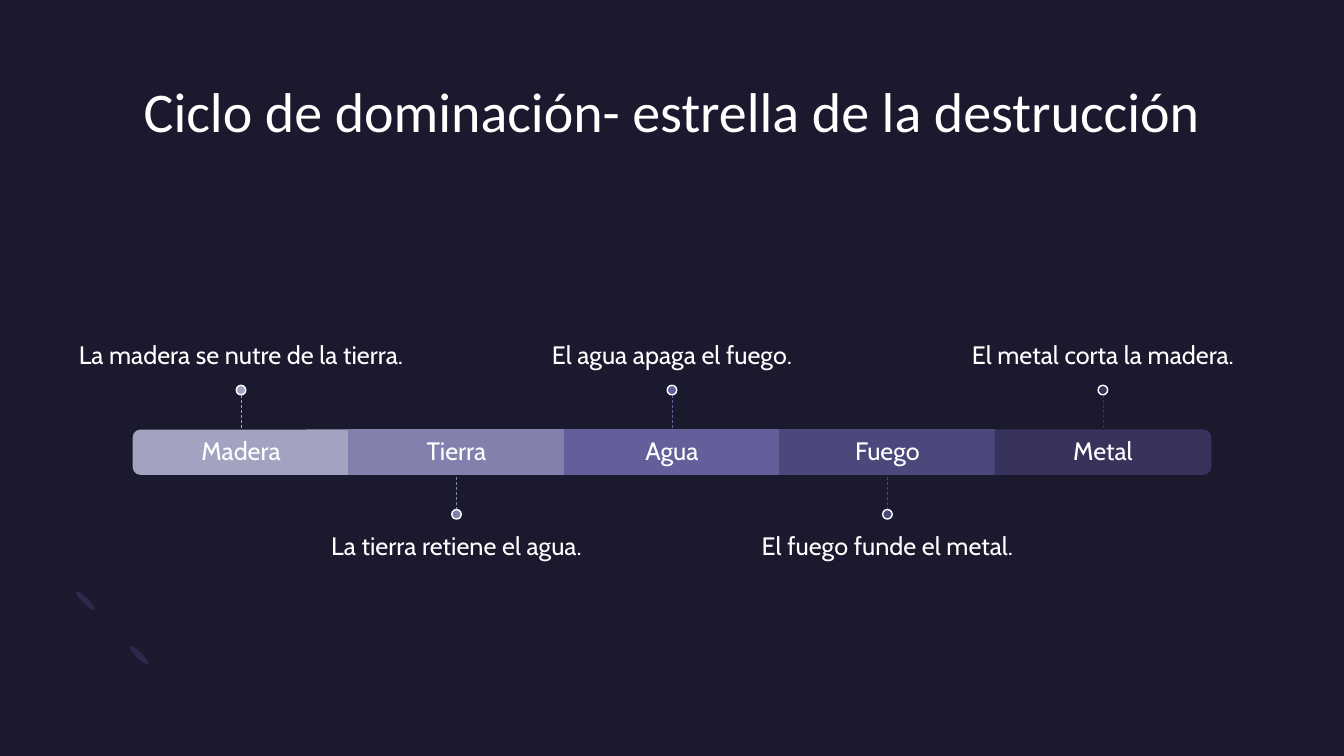
from lxml import etree
from pptx import Presentation
from pptx.dml.color import RGBColor
from pptx.enum.dml import MSO_LINE as Dash
from pptx.enum.shapes import MSO_CONNECTOR as Link, MSO_SHAPE as Kind
from pptx.enum.text import MSO_ANCHOR as Anchor, MSO_AUTO_SIZE as Fit, PP_ALIGN as Align
from pptx.oxml.ns import qn
from pptx.util import Cm, Pt

HUES = {
    "back": "1B192E", "text": "FFFFFF", "petal": "2C284A", "ring": "7771B2",
    "Madera": "A3A3C1", "Tierra": "8281AE", "Agua": "625F9A",
    "Fuego": "4C487B", "Metal": "37335B",
}
STEPS = [
    ("Madera", "La madera se nutre de la tierra."),
    ("Tierra", "La tierra retiene el agua."),
    ("Agua", "El agua apaga el fuego."),
    ("Fuego", "El fuego funde el metal."),
    ("Metal", "El metal corta la madera."),
]
INSET = 0.38
DOT = 0.24
STEM = 0.89


def hue(name):
    return RGBColor.from_string(HUES[name])


def paint(shape, fill, line=None):
    shape.shadow.inherit = False
    shape.fill.solid()
    shape.fill.fore_color.rgb = hue(fill)
    if line:
        shape.line.color.rgb = hue(line)
        shape.line.width = Pt(1)
    else:
        shape.line.fill.background()


def write(shape, text, font, size, anchor, pads=(0, 0, 0, 0)):
    """Fill a text frame; pads are left, top, right, bottom in cm."""
    frame = shape.text_frame
    frame.word_wrap = True
    frame.auto_size = Fit.NONE
    frame.vertical_anchor = anchor
    frame.margin_left, frame.margin_top, frame.margin_right, frame.margin_bottom = map(Cm, pads)
    para = frame.paragraphs[0]
    para.alignment = Align.CENTER
    para.line_spacing = 0.9
    run = para.add_run()
    run.text = text
    run.font.name = font
    run.font.size = Pt(size)
    run.font.color.rgb = hue("text")


def head(slide, x, y, w, h):
    title = slide.shapes.title
    title.left, title.top, title.width, title.height = map(Cm, (x, y, w, h))
    write(title, "Ciclo de dominación- estrella de la destrucción", "Calibri", 40, Anchor.TOP)


def curve(a, b, c, d, count=16):
    """Points of a cubic curve after its start."""
    for i in range(1, count + 1):
        t = i / count
        u = 1 - t
        yield tuple(u**3 * p + 3 * u * u * t * q + 3 * u * t * t * r + t**3 * s
                    for p, q, r, s in zip(a, b, c, d))


def mark(slide, x, y):
    """Faint ring and two petals in the lower corner."""
    for dx, dy in ((2.01, 1.37), (0.66, 0)):
        petal = slide.shapes.add_shape(Kind.OVAL, Cm(x + dx), Cm(y + dy), Cm(0.15), Cm(0.66))
        petal.rotation = 135
        paint(petal, "petal")
    start = (0.51, 1.93)
    dots = [
        *curve(start, (0, 1.42), (0.05, 0.56), (0.64, -0.03)), (1.09, 0.43),
        *curve((1.09, 0.43), (0.79, 0.71), (0.76, 1.17), (1.02, 1.4)),
        *curve((1.02, 1.4), (1.27, 1.65), (1.7, 1.63), (2.01, 1.35)), (2.44, 1.8),
        *curve((2.44, 1.8), (1.88, 2.36), (0.99, 2.44), start),
    ]
    dots = [(Cm(x + px), Cm(y + py)) for px, py in dots]
    build = slide.shapes.build_freeform(*dots[0])
    build.add_line_segments(dots[1:])
    ring = build.convert_to_shape()
    paint(ring, "ring")
    shade = ring.fill._xPr.find(qn("a:solidFill"))[0]
    etree.SubElement(shade, qn("a:alpha"), val="2000")


def block(slide, name, turn, x, y, w, h):
    """One bar segment; a turn rounds its outer end."""
    if turn:
        bar = slide.shapes.add_shape(
            Kind.ROUND_2_SAME_RECTANGLE,
            Cm(x + (w - h) / 2), Cm(y + (h - w) / 2), Cm(h), Cm(w))
        bar.rotation = turn
    else:
        bar = slide.shapes.add_shape(Kind.RECTANGLE, Cm(x), Cm(y), Cm(w), Cm(h))
    paint(bar, name, name)
    label = slide.shapes.add_textbox(Cm(x), Cm(y), Cm(w), Cm(h))
    write(label, name, "Cabin", 18, Anchor.MIDDLE, (INSET,) * 4)
    return bar


def callout(slide, name, note, bar, mid, edge, up):
    """Stem, dot and note that leave the bar at its edge."""
    way = -1 if up else 1
    tip = edge + way * STEM
    stem = slide.shapes.add_connector(Link.STRAIGHT, Cm(mid), Cm(tip), Cm(mid), Cm(edge))
    if not bar.rotation:
        stem.end_connect(bar, 0 if up else 2)
    stem.line.color.rgb = hue(name)
    stem.line.width = Pt(0.5)
    stem.line.dash_style = Dash.DASH
    etree.SubElement(stem._element.spPr, qn("a:effectLst"))

    top = tip - DOT if up else tip
    dot = slide.shapes.add_shape(Kind.OVAL, Cm(mid - DOT / 2), Cm(top), Cm(DOT), Cm(DOT))
    paint(dot, name, "text")

    w, h = 9.07, 3.86
    top = tip - DOT - h if up else tip + DOT
    box = slide.shapes.add_textbox(Cm(mid - w / 2), Cm(top), Cm(w), Cm(h))
    if up:
        write(box, note, "Cabin", 18, Anchor.BOTTOM, (0, 0, 0, INSET))
    else:
        write(box, note, "Cabin", 18, Anchor.TOP, (0, INSET, 0, 0))


def cycle(slide, x, y, w, h):
    step = w / len(STEPS)
    turns = {0: 270, len(STEPS) - 1: 90}
    for i, (name, note) in enumerate(STEPS):
        left = x + i * step
        bar = block(slide, name, turns.get(i, 0), left, y, step, h)
        up = i % 2 == 0
        callout(slide, name, note, bar, left + step / 2, y if up else y + h, up)


def main():
    deck = Presentation()
    deck.slide_width, deck.slide_height = Cm(33.87), Cm(19.05)
    slide = deck.slides.add_slide(deck.slide_layouts[5])
    slide.background.fill.solid()
    slide.background.fill.fore_color.rgb = hue("back")
    mark(slide, 1.42, 14.81)
    head(slide, 1.52, 2.13, 30.81, 2.59)
    cycle(slide, 3.36, 10.84, 27.15, 1.11)
    deck.save("out.pptx")


if __name__ == "__main__":
    main()
